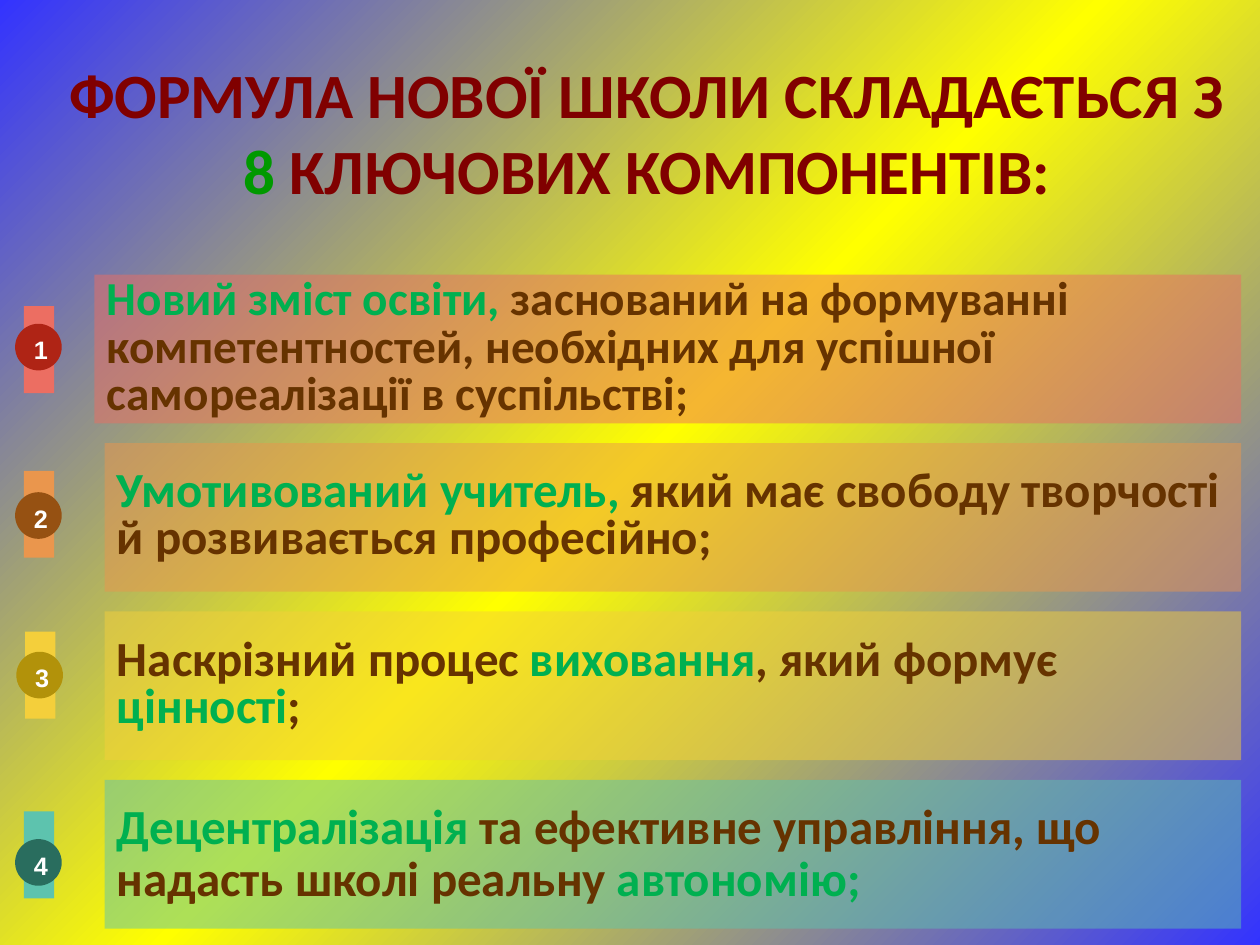
"""Build the slide on the first four components of the new school formula."""
from copy import deepcopy

from pptx import Presentation
from pptx.dml.color import RGBColor
from pptx.enum.shapes import MSO_SHAPE
from pptx.enum.text import MSO_ANCHOR, PP_ALIGN
from pptx.oxml.ns import qn
from pptx.util import Inches, Pt

BLUE = RGBColor(0x33, 0x33, 0xFF)
YELLOW = RGBColor(0xFF, 0xFF, 0x00)
MAROON = RGBColor(0x80, 0x00, 0x00)
LEAF = RGBColor(0x00, 0x99, 0x00)
GREEN = RGBColor(0x00, 0xB0, 0x50)
BROWN = RGBColor(0x66, 0x33, 0x00)
WHITE = RGBColor(0xFF, 0xFF, 0xFF)
CORAL, BRICK = RGBColor(0xEC, 0x6E, 0x62), RGBColor(0xAF, 0x24, 0x15)
ORANGE, RUST = RGBColor(0xEA, 0x96, 0x4D), RGBColor(0x96, 0x51, 0x12)
GOLD, OLIVE = RGBColor(0xF4, 0xCF, 0x3B), RGBColor(0xB2, 0x92, 0x0A)
AQUA, PINE = RGBColor(0x5D, 0xC3, 0xAE), RGBColor(0x29, 0x6D, 0x5E)

FIRST_ROW = 2.18
ROW_PITCH = (6.19 - FIRST_ROW) / 3
CARD_RIGHT, CARD_HEIGHT = 9.85, 1.18
TAB_WIDTH, TAB_HEIGHT, BADGE_SIZE = 0.24, 0.69, 0.37


def add_block(page, kind, left, top, width, height, color, alpha=None):
    block = page.shapes.add_shape(
        kind, Inches(left), Inches(top), Inches(width), Inches(height))
    block.shadow.inherit = False
    block.fill.solid()
    block.fill.fore_color.rgb = color
    block.line.fill.background()
    if alpha is not None:
        tint = block.fill._xPr.find(".//" + qn("a:srgbClr"))
        tint.makeelement(qn("a:alpha"), {})
        tint.append(tint.makeelement(qn("a:alpha"), {"val": str(alpha * 1000)}))
    return block


def write_text(box, spans, size, font="Calibri", align=PP_ALIGN.LEFT,
               spacing=None, small_caps=False):
    frame = box.text_frame
    frame.word_wrap = True
    frame.vertical_anchor = MSO_ANCHOR.MIDDLE
    para = frame.paragraphs[0]
    para.alignment = align
    if spacing:
        para.line_spacing = Pt(spacing)
    for text, color in spans:
        span = para.add_run()
        span.text = text
        span.font.name = font
        span.font.size = Pt(size)
        span.font.bold = True
        span.font.color.rgb = color
        if small_caps:
            span._r.get_or_add_rPr().set("cap", "small")
    return frame


deck = Presentation()
deck.slide_width, deck.slide_height = Inches(10), Inches(7.5)
page = deck.slides.add_slide(deck.slide_layouts[6])

backdrop = page.background.fill
backdrop.gradient()
backdrop.gradient_angle = 315
start, end = backdrop.gradient_stops
start._gs.addnext(deepcopy(start._gs))
for stop, color, position in zip(
        backdrop.gradient_stops, (BLUE, YELLOW, BLUE), (0, 0.5, 1)):
    stop.color.rgb = color
    stop.position = position

components = [
    (CORAL, BRICK, 0.75, 0.19, 0.25, 0.39, 27, 27, [
        ("Новий зміст освіти, ", GREEN),
        ("заснований на формуванні компетентностей, необхідних для успішної "
         "самореалізації в суспільстві;", BROWN)]),
    (ORANGE, RUST, 0.83, 0.19, 0.22, 0.39, 28, 27, [
        ("Умотивований учитель, ", GREEN),
        ("який має свободу творчості й розвивається професійно;", BROWN)]),
    (GOLD, OLIVE, 0.83, 0.2, 0.16, 0.32, 28, 27, [
        ("Наскрізний процес ", BROWN), ("виховання", GREEN),
        (", який формує ", BROWN), ("цінності", GREEN), (";", BROWN)]),
    (AQUA, PINE, 0.83, 0.19, 0.25, 0.47, 28, 30, [
        ("Децентралізація", GREEN),
        (" та ефективне управління, що надасть школі реальну ", BROWN),
        ("автономію;", GREEN)]),
]

for row, (light, dark, card_left, tab_left, tab_drop, badge_drop,
          size, spacing, spans) in enumerate(components):
    top = FIRST_ROW + row * ROW_PITCH
    add_block(page, MSO_SHAPE.RECTANGLE, tab_left, top + tab_drop,
              TAB_WIDTH, TAB_HEIGHT, light)
    card = add_block(page, MSO_SHAPE.RECTANGLE, card_left, top,
                     CARD_RIGHT - card_left, CARD_HEIGHT, light, alpha=50)
    write_text(card, spans, size, spacing=spacing)
    badge = add_block(page, MSO_SHAPE.OVAL, tab_left - 0.07, top + badge_drop,
                      BADGE_SIZE, BADGE_SIZE, dark)
    label = write_text(badge, [(str(row + 1), WHITE)], 18, font="Arial",
                       align=PP_ALIGN.CENTER, small_caps=True)
    label.margin_left = Inches(0.04)
    label.margin_right = label.margin_top = label.margin_bottom = 0

title = page.shapes.add_textbox(
    Inches(0.27), Inches(0.3), Inches(9.73), Inches(1.48))
write_text(title, [("ФОРМУЛА НОВОЇ ШКОЛИ СКЛАДАЄТЬСЯ З ", MAROON), ("8", LEAF),
                   (" КЛЮЧОВИХ КОМПОНЕНТІВ:", MAROON)],
           36, align=PP_ALIGN.CENTER)

deck.save("out.pptx")
